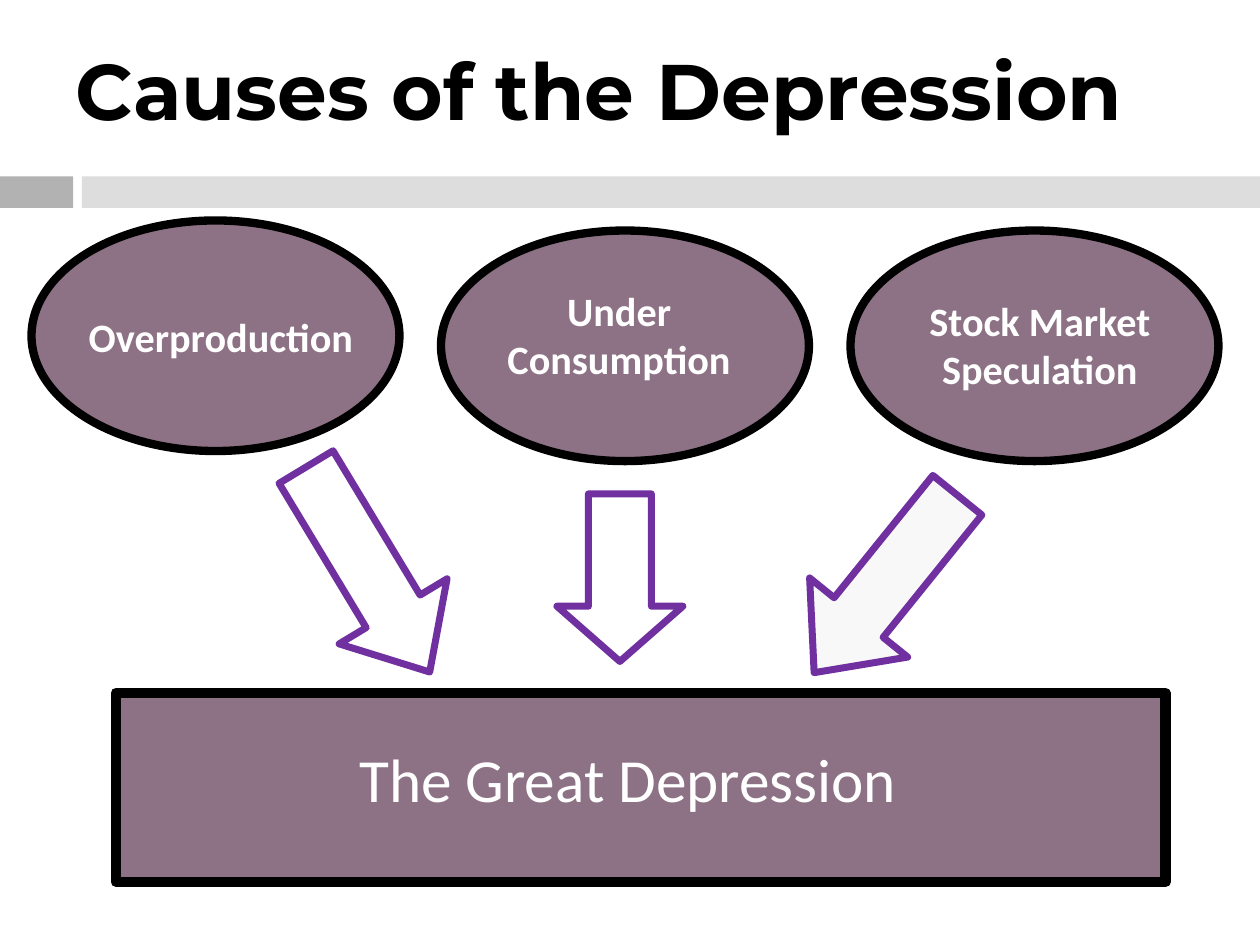
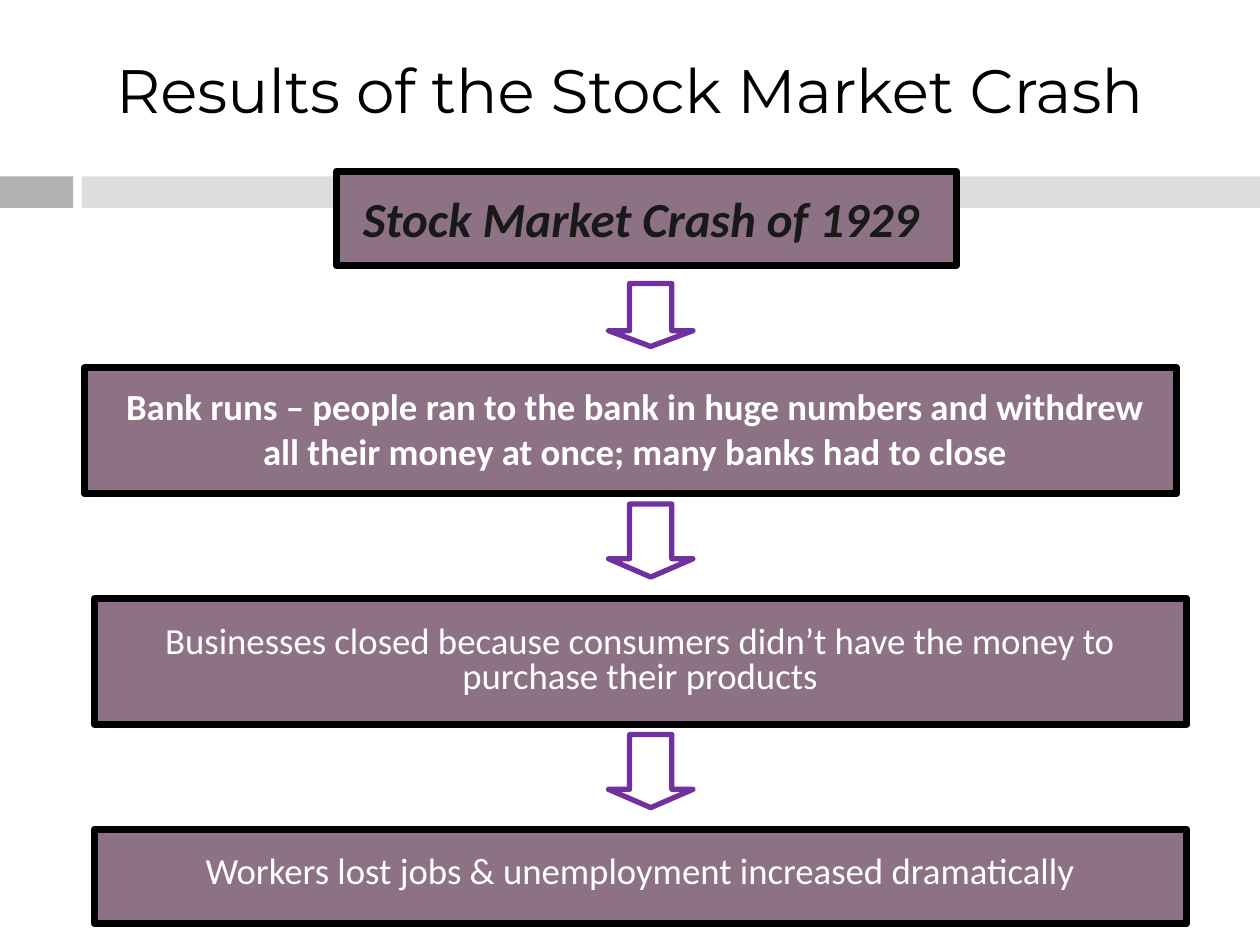
from pptx import Presentation
from pptx.dml.color import RGBColor
from pptx.enum import shapes, text
from pptx.util import Inches, Pt

INK = {
    "black": "000000", "white": "FFFFFF", "dark": "191919", "mauve": "8D7185",
    "violet": "7030A0", "pale": "F8F8F8", "grey": "B2B2B2", "light": "DDDDDD",
}
KIND = shapes.MSO_SHAPE


def color(name):
    return RGBColor.from_string(INK[name])


def place(item, box):
    item.left, item.top, item.width, item.height = map(Inches, box)


def style(font, face, size, ink, bold=False, italic=False):
    font.name, font.size = face, Pt(size)
    font.color.rgb = color(ink)
    font.bold, font.italic = bold, italic


def shape(slide, kind, box, fill, line=None, width=0):
    item = slide.shapes.add_shape(kind, *map(Inches, box))
    item.shadow.inherit = False
    item.fill.solid()
    item.fill.fore_color.rgb = color(fill)
    if line:
        item.line.color.rgb = color(line)
        item.line.width = Pt(width)
    else:
        item.line.fill.background()
    return item


def arrow(slide, box, head, width, turn=0, fill="white"):
    item = shape(slide, KIND.DOWN_ARROW, box, fill, "violet", width)
    item.adjustments[0], item.adjustments[1] = 0.5, head
    item.rotation = turn


def label(slide, box, words, size, ink="white", bold=False, italic=False, pitch=None):
    frame = slide.shapes.add_textbox(*map(Inches, box)).text_frame
    frame.word_wrap = True
    para = frame.paragraphs[0]
    para.text = words
    para.alignment = text.PP_ALIGN.CENTER
    para.line_spacing = pitch
    style(para.font, "Calibri", size, ink, bold, italic)


def title(slide, box, words, size, align, bold=False):
    item = slide.shapes.title
    place(item, box)
    item.text = words
    item.text_frame.vertical_anchor = text.MSO_ANCHOR.MIDDLE
    para = item.text_frame.paragraphs[0]
    para.alignment = align
    style(para.font, "Montserrat", size, "black", bold)


def bands(slide):
    """Put the two grey bands behind everything on the slide's layout."""
    tree = slide.slide_layout.shapes.element
    for left, width, fill in ((0, 0.58, "grey"), (0.65, 9.35, "light")):
        band = shape(slide, KIND.RECTANGLE, (left, 1.4, width, 0.25), fill)
        tree.insert(2, band.element)


def causes(slide):
    title(slide, (0.5, 0.08, 9, 1.25), "Causes of the Depression", 45,
          text.PP_ALIGN.LEFT, bold=True)
    ovals = (
        (0.25, 1.75, 0.42, 2.43, "Overproduction"),
        (3.5, 1.83, 3.58, 2.22, "Under Consumption"),
        (6.75, 1.83, 6.92, 2.3, "Stock Market Speculation"),
    )
    for left, top, inner, line, words in ovals:
        shape(slide, KIND.OVAL, (left, top, 2.92, 1.83), "mauve", "black", 4.75)
        label(slide, (inner, line, 2.67, 0.87), words, 23, bold=True)
    arrow(slide, (2.42, 3.57, 1, 1.9), 0.562, 4, 328.9)
    arrow(slide, (4.42, 3.92, 1, 1.33), 0.438, 4)
    arrow(slide, (6.53, 3.73, 1, 1.81), 0.562, 4, 38.9, "pale")
    shape(slide, KIND.RECTANGLE, (0.92, 5.5, 8.33, 1.5), "mauve", "black", 6)
    label(slide, (1.08, 5.83, 7.92, 0.68), "The Great Depression ", 35)


def results(slide):
    title(slide, (0, 0.08, 10, 1.25), "Results of the Stock Market Crash", 35,
          text.PP_ALIGN.CENTER)
    plain = {"size": 21, "pitch": 0.8}
    steps = (
        ((2.67, 1.36, 4.92, 0.75), (2.67, 1.45, 4.83, 0.57),
         "Stock Market Crash of 1929",
         {"size": 28, "ink": "dark", "bold": True, "italic": True}),
        ((0.67, 2.92, 8.67, 1), (0.83, 3, 8.42, 0.8),
         "Bank runs – people ran to the bank in huge numbers and withdrew "
         "all their money at once; many banks had to close",
         {"size": 21, "bold": True}),
        ((0.75, 4.75, 8.67, 1), (1.08, 4.92, 8, 0.66),
         "Businesses closed because consumers didn’t have the money to "
         "purchase their products", plain),
        ((0.75, 6.58, 8.67, 0.75), (1.08, 6.75, 8, 0.39),
         "Workers lost jobs & unemployment increased dramatically", plain),
    )
    for box, inner, words, look in steps:
        shape(slide, KIND.RECTANGLE, box, "mauve", "black", 4)
        label(slide, inner, words, **look)
    for top, height in ((2.25, 0.5), (4, 0.58), (5.83, 0.58)):
        arrow(slide, (4.83, top, 0.67, height), 0.25, 3)


def main():
    deck = Presentation()
    deck.slide_width, deck.slide_height = Inches(10), Inches(7.5)
    layout = deck.slide_layouts.get_by_name("Title Only")
    first, second = (deck.slides.add_slide(layout) for _ in range(2))
    bands(first)
    causes(first)
    results(second)
    deck.save("out.pptx")


if __name__ == "__main__":
    main()
